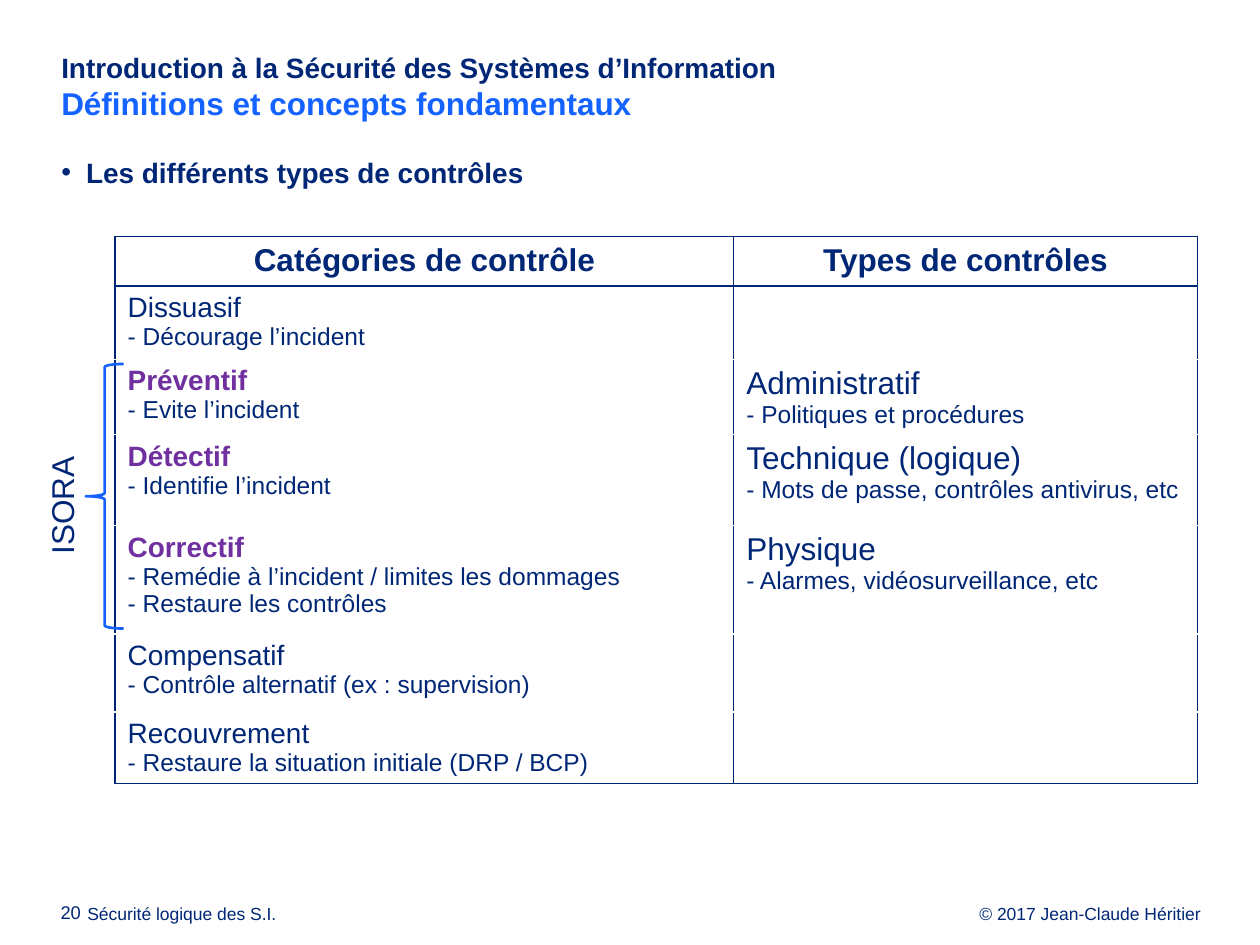
from lxml import etree
from pptx import Presentation
from pptx import util as u
from pptx.dml.color import RGBColor
from pptx.enum import shapes, text
from pptx.oxml import ns

NAVY = RGBColor(0x00, 0x27, 0x76)
BLUE = RGBColor(0x14, 0x62, 0xFF)
PURPLE = RGBColor(0x70, 0x30, 0xA0)
CENTER = {"alignment": text.PP_ALIGN.CENTER}

HEADERS = ["Catégories de contrôle", "Types de contrôles"]
COLUMN_WIDTHS = [353.5, 265]
ROW_HEIGHTS = [28.3, 42, 42, 52, 62, 44.6, 32]
# Category, whether it is highlighted, its details, then type and its detail
ROWS = [
    ("Dissuasif", False, ["- Décourage l’incident"], None),
    ("Préventif", True, ["- Evite l’incident"],
     ("Administratif", "- Politiques et procédures")),
    ("Détectif", True, ["- Identifie l’incident"],
     ("Technique (logique)", "- Mots de passe, contrôles antivirus, etc")),
    ("Correctif", True,
     ["- Remédie à l’incident / limites les dommages", "- Restaure les contrôles"],
     ("Physique", "- Alarmes, vidéosurveillance, etc")),
    ("Compensatif", False, ["- Contrôle alternatif (ex : supervision)"], None),
    ("Recouvrement", False, ["- Restaure la situation initiale (DRP / BCP)"], None),
]


def apply(target, values):
    for name, value in values.items():
        setattr(target, name, value)


def place(shape, left, top, width, height):
    apply(shape, {"left": u.Pt(left), "top": u.Pt(top),
                  "width": u.Pt(width), "height": u.Pt(height)})


class SlideBuilder:
    font = "Arial"

    def __init__(self, presentation):
        self.slide = presentation.slides.add_slide(presentation.slide_layouts[1])

    def add_lines(self, paragraph, lines, **layout):
        """Fill a paragraph with (text, size, bold, colour) lines."""
        apply(paragraph, {"space_before": u.Pt(0), **layout})
        for index, (words, size, bold, color) in enumerate(lines):
            if index:
                paragraph.add_line_break()
            run = paragraph.add_run()
            run.text = words
            apply(run.font, {"name": self.font, "size": u.Pt(size), "bold": bold})
            run.font.color.rgb = color

    def frame(self, shape, left_margin=0, **layout):
        """Set up the text frame and return its first paragraph."""
        apply(shape.text_frame, {
            "margin_left": u.Pt(left_margin), "margin_top": 0, "margin_right": 0,
            "margin_bottom": 0, "vertical_anchor": text.MSO_ANCHOR.TOP,
            "auto_size": text.MSO_AUTO_SIZE.NONE, "word_wrap": True, **layout})
        return shape.text_frame.paragraphs[0]

    def title(self, box, lines):
        shape = self.slide.shapes.title
        place(shape, *box)
        self.add_lines(self.frame(shape, 3), lines, alignment=text.PP_ALIGN.LEFT)

    def bullet(self, box, line):
        shape = self.slide.placeholders[1]
        place(shape, *box)
        paragraph = self.frame(shape, 3)
        self.add_lines(paragraph, [line])
        properties = paragraph._p.get_or_add_pPr()
        properties.set("marL", str(u.Pt(14.2)))
        properties.set("indent", str(u.Pt(-14.2)))
        etree.SubElement(properties, ns.qn("a:buChar")).set("char", "•")

    def label(self, box, line, rotation=0, frame=None, **layout):
        shape = self.slide.shapes.add_textbox(0, 0, 0, 0)
        place(shape, *box)
        shape.rotation = rotation
        self.add_lines(self.frame(shape, **(frame or {})), [line], **layout)

    def brace(self, box):
        shape = self.slide.shapes.add_shape(shapes.MSO_SHAPE.LEFT_BRACE, 0, 0, 0, 0)
        place(shape, *box)
        shape.shadow.inherit = False
        shape.fill.background()
        shape.line.color.rgb = BLUE
        shape.line.width = u.Pt(1.5)

    def borders(self, cell, sides):
        properties = cell._tc.get_or_add_tcPr()
        for position, side in enumerate(sides):
            line = etree.Element(ns.qn(f"a:ln{side}"), w=str(u.Pt(1)))
            fill = etree.SubElement(line, ns.qn("a:solidFill"))
            etree.SubElement(fill, ns.qn("a:srgbClr")).set("val", str(NAVY))
            properties.insert(position, line)

    def table(self, left, top):
        table = self.slide.shapes.add_table(
            len(ROW_HEIGHTS), len(COLUMN_WIDTHS), u.Pt(left), u.Pt(top),
            u.Pt(sum(COLUMN_WIDTHS)), u.Pt(sum(ROW_HEIGHTS))).table
        apply(table, {"first_row": False, "horz_banding": False})
        for column, width in zip(table.columns, COLUMN_WIDTHS):
            column.width = u.Pt(width)
        border_sides = {0: "LRTB", 1: "LRT", len(ROW_HEIGHTS) - 1: "LRB"}
        for index, (row, height) in enumerate(zip(table.rows, ROW_HEIGHTS)):
            row.height = u.Pt(height)
            for cell in row.cells:
                cell.fill.background()
                self.borders(cell, border_sides.get(index, "LR"))
        for column, header in enumerate(HEADERS):
            self.add_lines(table.cell(0, column).text_frame.paragraphs[0],
                           [(header, 18, True, NAVY)], **CENTER)
        for index, (category, marked, details, kind) in enumerate(ROWS, 1):
            lines = [(category, 16, marked, PURPLE if marked else NAVY)]
            lines += [(detail, 14, False, NAVY) for detail in details]
            self.add_lines(table.cell(index, 0).text_frame.paragraphs[0], lines)
            if kind:
                frame = table.cell(index, 1).text_frame
                self.add_lines(frame.paragraphs[0], [(kind[0], 18, False, NAVY)])
                self.add_lines(frame.add_paragraph(), [(kind[1], 14, False, NAVY)])


def main():
    presentation = Presentation()
    apply(presentation, {"slide_width": u.Pt(720), "slide_height": u.Pt(540)})
    builder = SlideBuilder(presentation)
    builder.title((32, 29, 663, 50), [
        ("Introduction à la Sécurité des Systèmes d’Information", 16, True, NAVY),
        ("Définitions et concepts fondamentaux", 18, True, BLUE)])
    builder.bullet((32, 88.6, 663, 416),
                   ("Les différents types de contrôles", 16, True, NAVY))
    builder.table(65.8, 135)
    builder.brace((49, 208, 21.6, 151.2))
    builder.label((0.7, 274.3, 69, 28.8), ("ISORA", 18, False, NAVY), rotation=270,
                  frame={"word_wrap": False, "vertical_anchor": text.MSO_ANCHOR.MIDDLE},
                  **CENTER)
    for left, width, words, size, alignment in [
            (34.6, 18.7, "20", 10.5, text.PP_ALIGN.LEFT),
            (49.9, 182, "Sécurité logique des S.I.", 10, text.PP_ALIGN.LEFT),
            (504, 182, "© 2017 Jean-Claude Héritier", 10, text.PP_ALIGN.RIGHT)]:
        builder.label((left, 517, width, 11.5), (words, size, False, NAVY),
                      alignment=alignment, line_spacing=u.Pt(10.8))
    presentation.save("out.pptx")


if __name__ == "__main__":
    main()
